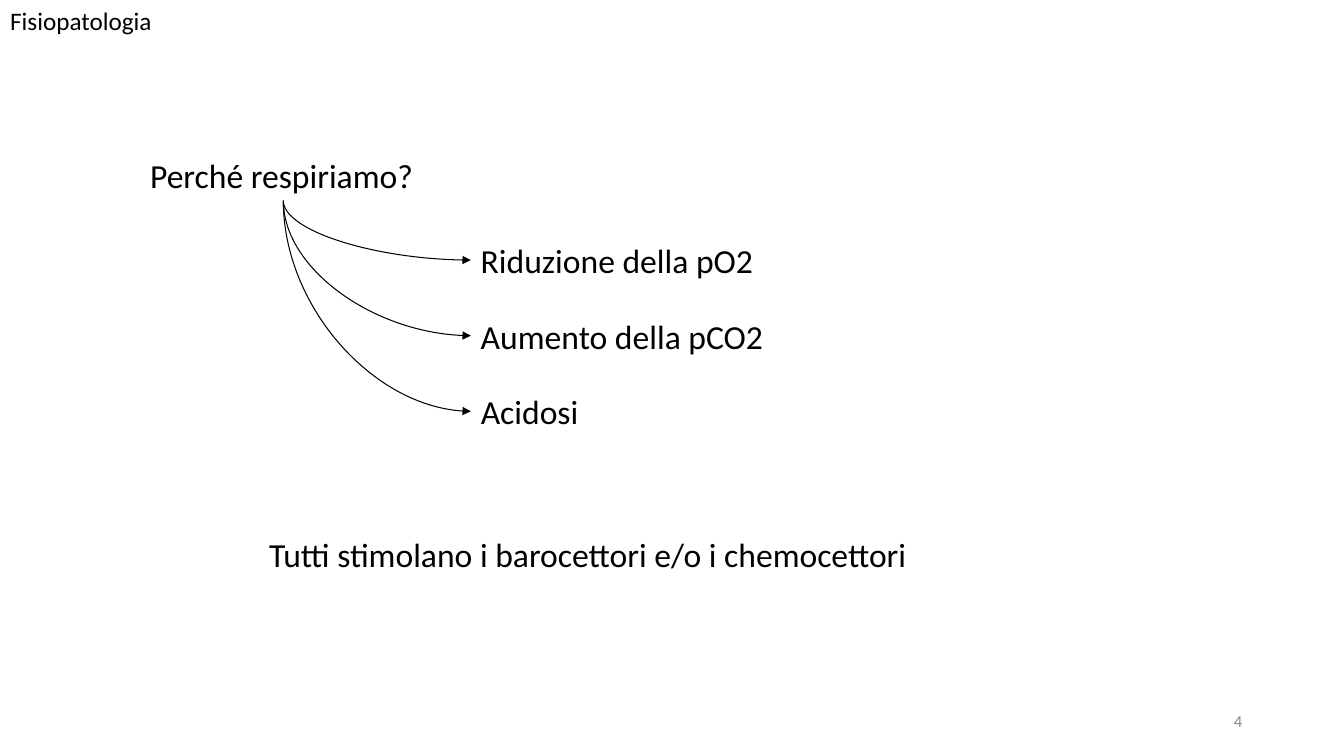
from lxml.etree import SubElement
from pptx import Presentation
from pptx.dml.color import RGBColor
from pptx.enum.shapes import MSO_CONNECTOR as CONNECTOR
from pptx.enum.text import MSO_ANCHOR as ANCHOR, MSO_AUTO_SIZE as AUTO_SIZE, PP_ALIGN as ALIGN
from pptx.oxml.ns import qn
from pptx.util import Pt

EMU_PER_PX = 9144
LINE_HEIGHT = 51
CAUSES = [("Riduzione della pO2", 293), ("Aumento della pCO2", 304), ("Acidosi", 118)]


def px(length):
    return round(length * EMU_PER_PX)


def color(hex_code):
    return RGBColor.from_string(hex_code)


def place(shape, box):
    shape.left, shape.top, shape.width, shape.height = map(px, box)


def write(slide, words, box, holder=None, size=24, ink="000000",
          align=ALIGN.LEFT, anchor=ANCHOR.TOP, wrap=False):
    holder = holder or slide.shapes.add_textbox(0, 0, 0, 0)
    place(holder, box)
    frame = holder.text_frame
    frame.word_wrap = wrap
    frame.auto_size = AUTO_SIZE.NONE if wrap else AUTO_SIZE.SHAPE_TO_FIT_TEXT
    frame.vertical_anchor = anchor
    paragraph = frame.paragraphs[0]
    paragraph.alignment = align
    run = paragraph.add_run()
    run.text = words
    run.font.name = "Calibri"
    run.font.size = Pt(size)
    run.font.color.rgb = color(ink)


def curved_arrow(slide, start, end):
    (x1, y1), (x2, y2) = start, end
    across, down = x2 - x1, y2 - y1
    arrow = slide.shapes.add_connector(CONNECTOR.CURVE, 0, 0, 0, 0)
    place(arrow, ((x1 + x2 - down) / 2, (y1 + y2 - across) / 2, down, across))
    arrow.line.color.rgb = color("000000")
    arrow.line.width = Pt(0.75)
    properties = arrow._element.spPr
    turn = properties.find(qn("a:xfrm"))
    turn.set("rot", str(270 * 60000))
    turn.set("flipH", "1")
    properties.find(qn("a:prstGeom")).set("prst", "curvedConnector2")
    SubElement(properties.find(qn("a:ln")), qn("a:tailEnd"), type="triangle")
    SubElement(properties, qn("a:effectLst"))


def heading(slide, box):
    write(slide, "Fisiopatologia", box, holder=slide.shapes.title, size=18)


def causes_diagram(slide, box):
    left, top, width, height = box
    question_width, causes_left, causes_top = 285, left + 328, top + 84
    step = (height - 84 - LINE_HEIGHT) // (len(CAUSES) - 1)
    write(slide, "Perché respiriamo?", (left, top, question_width, LINE_HEIGHT))
    origin = (left + question_width // 2, top + LINE_HEIGHT - 1)
    for row, (cause, cause_width) in enumerate(CAUSES):
        cause_top = causes_top + row * step
        write(slide, cause, (causes_left, cause_top, cause_width, LINE_HEIGHT))
        curved_arrow(slide, origin, (causes_left, cause_top + LINE_HEIGHT // 2))


def conclusion(slide, box):
    write(slide, "Tutti stimolano i barocettori e/o i chemocettori", box)


def page_number(slide, box):
    write(slide, "4", box, size=12, ink="898989", align=ALIGN.RIGHT,
          anchor=ANCHOR.MIDDLE, wrap=True)


def main():
    deck = Presentation()
    deck.slide_width, deck.slide_height = px(1333), px(750)
    slide = deck.slides.add_slide(deck.slide_layouts[5])
    slide.background.fill.solid()
    slide.background.fill.fore_color.rgb = color("FFFFFF")
    heading(slide, (0, 0, 162, 40))
    causes_diagram(slide, (139, 149, 632, 285))
    conclusion(slide, (257, 525, 667, LINE_HEIGHT))
    page_number(slide, (942, 695, 300, 40))
    deck.save("out.pptx")


if __name__ == "__main__":
    main()
